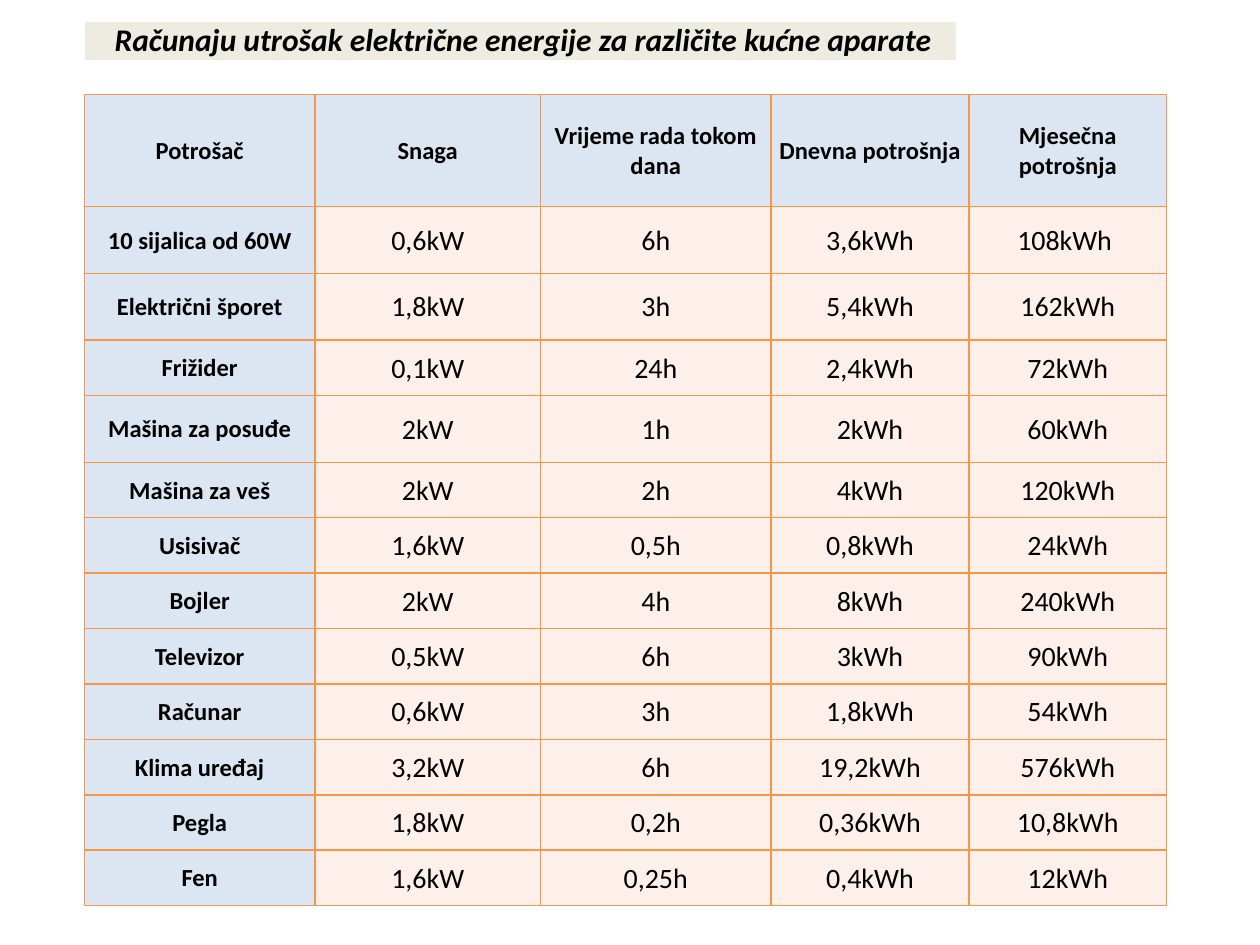
import pptx
import pptx.util
import pptx.dml.color
import pptx.enum.text
import pptx.oxml
import pptx.oxml.ns
import lxml.etree

Inches = pptx.util.Inches
RGBColor = pptx.dml.color.RGBColor
Align = pptx.enum.text.PP_ALIGN
Anchor = pptx.enum.text.MSO_ANCHOR

BLACK = RGBColor(0x00, 0x00, 0x00)
WHITE = RGBColor(0xFF, 0xFF, 0xFF)
ORANGE = RGBColor(0xF7, 0x96, 0x46)
BLUE = RGBColor(0xDC, 0xE6, 0xF2)
PEACH = RGBColor(0xFD, 0xEF, 0xE9)
CREAM = RGBColor(0xEE, 0xEC, 0xE1)

TITLE = "Računaju utrošak električne energije za različite kućne aparate"
ROWS = [
    ("Potrošač", "Snaga", "Vrijeme rada tokom dana", "Dnevna potrošnja",
     "Mjesečna potrošnja"),
    ("10 sijalica od 60W", "0,6kW", "6h", "3,6kWh", "108kWh "),
    ("Električni šporet", "1,8kW", "3h", "5,4kWh", "162kWh"),
    ("Frižider", "0,1kW", "24h", "2,4kWh", "72kWh"),
    ("Mašina za posuđe", "2kW", "1h", "2kWh", "60kWh"),
    ("Mašina za veš", "2kW", "2h", "4kWh", "120kWh"),
    ("Usisivač", "1,6kW", "0,5h", "0,8kWh", "24kWh"),
    ("Bojler", "2kW", "4h", "8kWh", "240kWh"),
    ("Televizor", "0,5kW", "6h", "3kWh", "90kWh"),
    ("Računar", "0,6kW", "3h", "1,8kWh", "54kWh"),
    ("Klima uređaj", "3,2kW", "6h", "19,2kWh", "576kWh"),
    ("Pegla", "1,8kW", "0,2h", "0,36kWh", "10,8kWh"),
    ("Fen", "1,6kW", "0,25h", "0,4kWh", "12kWh"),
]
WIDTHS = [1.83, 1.79, 1.83, 1.57, 1.57]
HIGH, TALL, LOW = 0.89, 0.53, 0.44
HEIGHTS = [HIGH, TALL, TALL, LOW, TALL] + [LOW] * 8


def write(cell, text, size=16, bold=False, italic=False, align=Align.CENTER):
    para = cell.text_frame.paragraphs[0]
    para.alignment = align
    run = para.add_run()
    run.text = text
    font = run.font
    font.name = "Calibri"
    font.size = pptx.util.Pt(size)
    font.bold = bold
    font.italic = italic
    font.color.rgb = BLACK


def paint(cell, fill, line, pads):
    """Set the margins, the four borders and the fill of a cell."""
    (cell.margin_left, cell.margin_top,
     cell.margin_right, cell.margin_bottom) = map(Inches, pads)
    props = cell._tc.get_or_add_tcPr()
    for side in ("lnL", "lnR", "lnT", "lnB"):
        edge = lxml.etree.SubElement(props, pptx.oxml.ns.qn("a:" + side),
                                     w=str(pptx.util.Pt(1)))
        solid = lxml.etree.SubElement(edge, pptx.oxml.ns.qn("a:solidFill"))
        lxml.etree.SubElement(solid, pptx.oxml.ns.qn("a:srgbClr"),
                              val=str(line))
    cell.fill.solid()
    cell.fill.fore_color.rgb = fill


def add_grid(slide, left, top, widths, heights):
    """Add a plain table with the given column widths and row heights."""
    frame = slide.shapes.add_table(
        len(heights), len(widths), Inches(left), Inches(top),
        Inches(sum(widths)), Inches(sum(heights)))
    grid = frame.table
    grid.first_row = grid.horz_banding = False
    for col, width in zip(grid.columns, widths):
        col.width = Inches(width)
    for row, height in zip(grid.rows, heights):
        row.height = Inches(height)
    return grid


def add_usage(slide, left, top):
    grid = add_grid(slide, left, top, WIDTHS, HEIGHTS)
    for r, row in enumerate(ROWS):
        for c, text in enumerate(row):
            cell = grid.cell(r, c)
            head = r == 0 or c == 0
            paint(cell, BLUE if head else PEACH, ORANGE,
                  (0.01, 0.01, 0.01, 0))
            cell.vertical_anchor = Anchor.MIDDLE
            write(cell, text, size=14 if head else 16, bold=head)


def add_title(slide, left, top, width, height):
    cell = add_grid(slide, left, top, [width], [height]).cell(0, 0)
    paint(cell, CREAM, WHITE, (0.24, 0, 0.12, 0))
    write(cell, TITLE, size=18, bold=True, italic=True, align=Align.JUSTIFY)


def main():
    deck = pptx.Presentation()
    deck.slide_width, deck.slide_height = Inches(10), Inches(7.5)
    slide = deck.slides.add_slide(deck.slide_layouts[6])
    # Consumption of each appliance
    add_usage(slide, 0.67, 0.75)
    # Title strip
    add_title(slide, 0.67, 0.17, 6.92, 0.31)
    deck.save("out.pptx")


if __name__ == "__main__":
    main()
